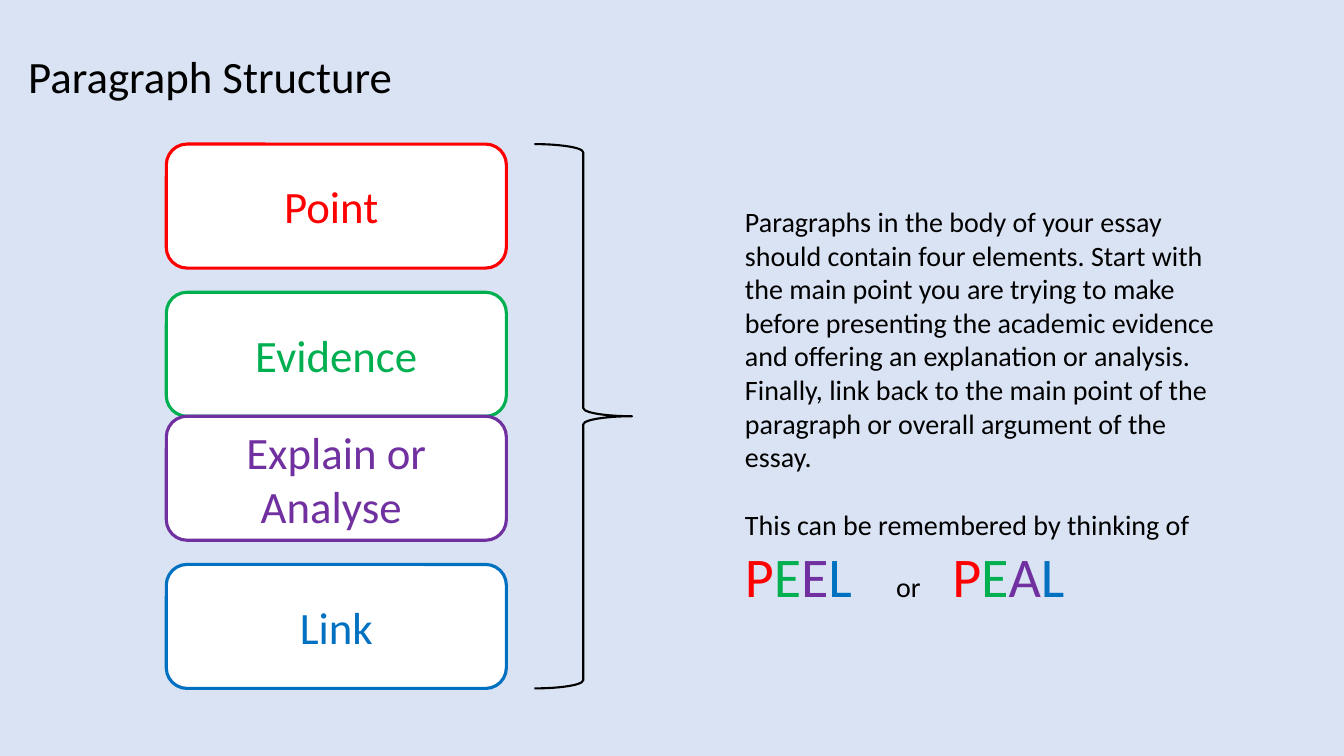
import dataclasses

import pptx
import pptx.dml.color
import pptx.enum.shapes
import pptx.enum.text
import pptx.util

SHAPE = pptx.enum.shapes.MSO_SHAPE
ALIGN = pptx.enum.text.PP_ALIGN
ANCHOR = pptx.enum.text.MSO_ANCHOR


@dataclasses.dataclass(frozen=True)
class Theme:
    font: str = "Calibri"
    background: str = "DAE3F3"
    box_fill: str = "FFFFFF"
    text: str = "000000"
    point: str = "FF0000"
    evidence: str = "00B050"
    explain: str = "7030A0"
    link: str = "0070C0"
    heading_size: int = 32
    body_size: int = 20
    acronym_size: int = 40
    tab_size: int = 18
    box_line: float = 2.25
    brace_line: float = 1.5


THEME = Theme()
ELEMENT_COLORS = (THEME.point, THEME.evidence, THEME.explain, THEME.link)
# Label of each element and the gap above its box
ELEMENTS = (("Point ", 0), ("Evidence", 0.24), ("Explain or Analyse ", 0), ("Link", 0.24))
BODY = (
    "Paragraphs in the body of your essay should contain four elements. "
    "Start with the main point you are trying to make before presenting the "
    "academic evidence and offering an explanation or analysis. Finally, link "
    "back to the main point of the paragraph or overall argument of the essay."
)


def rgb(color):
    return pptx.dml.color.RGBColor.from_string(color)


def inches(*lengths):
    return [pptx.util.Inches(length) for length in lengths]


def add_text(paragraph, text, size=THEME.body_size, color=THEME.text, align=ALIGN.LEFT):
    paragraph.alignment = align
    run = paragraph.add_run()
    run.text = text
    run.font.name = THEME.font
    run.font.size = pptx.util.Pt(size)
    run.font.color.rgb = rgb(color)


def add_outlined_shape(slide, kind, box, color, width, fill=None):
    shape = slide.shapes.add_shape(kind, *inches(*box))
    shape.shadow.inherit = False
    if fill:
        shape.fill.solid()
        shape.fill.fore_color.rgb = rgb(fill)
    else:
        shape.fill.background()
    shape.line.color.rgb = rgb(color)
    shape.line.width = pptx.util.Pt(width)
    return shape


def add_title(slide, box):
    title = slide.shapes.title
    title.left, title.top, title.width, title.height = inches(*box)
    frame = title.text_frame
    frame.auto_size = pptx.enum.text.MSO_AUTO_SIZE.NONE
    frame.vertical_anchor = ANCHOR.TOP
    add_text(frame.paragraphs[0], "Paragraph Structure", size=THEME.heading_size)


def add_elements(slide, box):
    """Stack the element boxes and close them with a brace."""
    left, top, width, height = box
    box_width = 0.73 * width
    brace_width = 0.21 * width
    box_height = (height - sum(gap for _, gap in ELEMENTS)) / len(ELEMENTS)
    box_top = top
    for (label, gap), color in zip(ELEMENTS, ELEMENT_COLORS):
        box_top += gap
        shape = add_outlined_shape(
            slide, SHAPE.ROUNDED_RECTANGLE, (left, box_top, box_width, box_height),
            color, THEME.box_line, fill=THEME.box_fill)
        frame = shape.text_frame
        frame.word_wrap = True
        frame.vertical_anchor = ANCHOR.MIDDLE
        add_text(frame.paragraphs[0], label, size=THEME.heading_size,
                 color=color, align=ALIGN.CENTER)
        box_top += box_height

    # Brace along the right edge
    add_outlined_shape(
        slide, SHAPE.RIGHT_BRACE, (left + width - brace_width, top, brace_width, height),
        THEME.text, THEME.brace_line)


def add_acronym(paragraph, letters):
    for letter, color in zip(letters, ELEMENT_COLORS):
        add_text(paragraph, letter, size=THEME.acronym_size, color=color)


def add_explanation(slide, box):
    frame = slide.shapes.add_textbox(*inches(*box)).text_frame
    frame.word_wrap = True
    add_text(frame.paragraphs[0], BODY)

    # Reminder with the two acronyms
    reminder = frame.add_paragraph()
    reminder.space_before = pptx.util.Pt(1.22 * THEME.body_size)
    add_text(reminder, "This can be remembered by thinking of ")
    add_acronym(reminder, "PEEL")
    add_text(reminder, " \t", size=THEME.tab_size)
    add_text(reminder, "or")
    add_text(reminder, "\t ", size=THEME.tab_size)
    add_acronym(reminder, "PEAL")


def main():
    presentation = pptx.Presentation()
    presentation.slide_width, presentation.slide_height = inches(13.33, 7.5)
    slide = presentation.slides.add_slide(presentation.slide_layouts.get_by_name("Title Only"))
    slide.background.fill.solid()
    slide.background.fill.fore_color.rgb = rgb(THEME.background)
    add_title(slide, (0.18, 0.43, 8.37, 0.64))
    add_elements(slide, (1.65, 1.43, 4.62, 5.4))
    add_explanation(slide, (7.29, 1.98, 4.91, 4.14))
    presentation.save("out.pptx")


if __name__ == "__main__":
    main()
